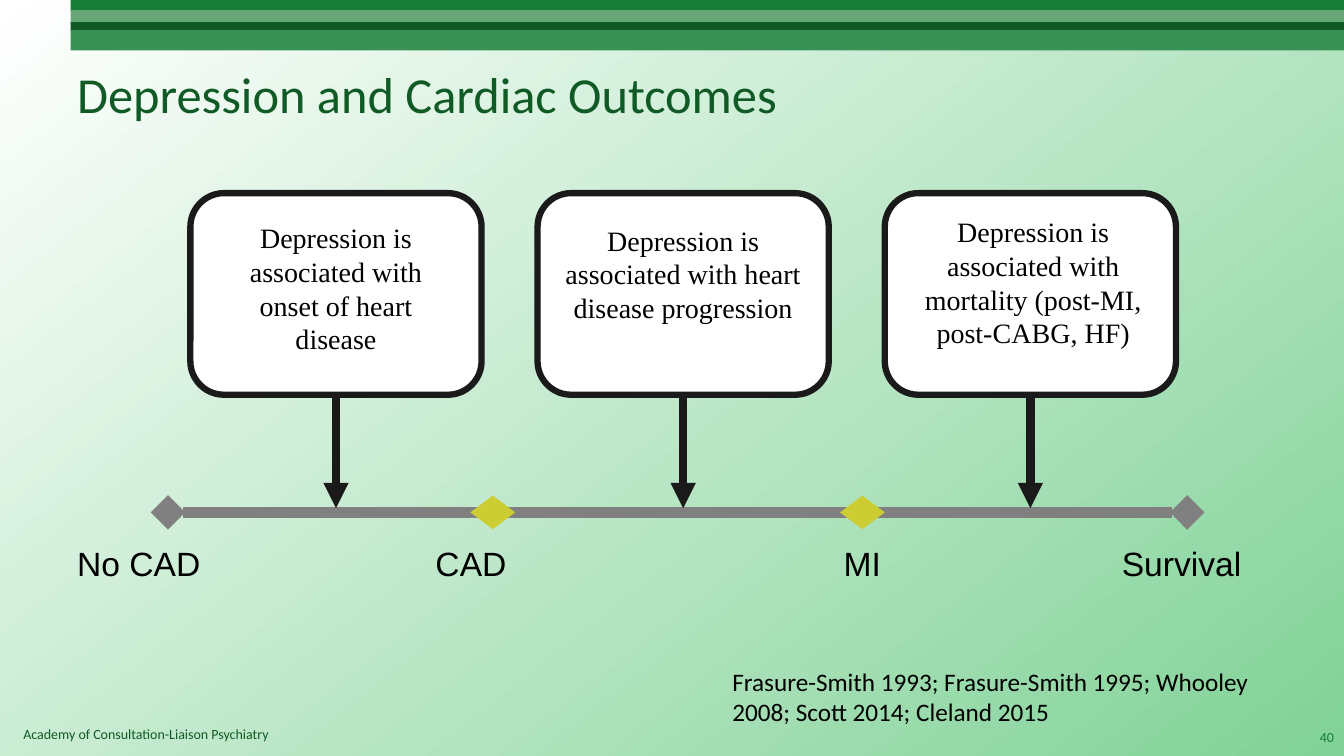
from lxml import etree
from pptx import Presentation
from pptx.dml.color import RGBColor
from pptx.enum.shapes import MSO_CONNECTOR, MSO_SHAPE
from pptx.enum.text import MSO_ANCHOR, MSO_AUTO_SIZE, PP_ALIGN
from pptx.oxml.ns import qn
from pptx.util import Inches, Pt

WIDTH, HEIGHT = Inches(13.33), Inches(7.5)
COLUMN, ROW = WIDTH / 120, HEIGHT / 90

WHITE = RGBColor(0xFF, 0xFF, 0xFF)
BLACK = RGBColor(0x00, 0x00, 0x00)
INK = RGBColor(0x1A, 0x1A, 0x1A)
GRAY = RGBColor(0x80, 0x80, 0x80)
YELLOW = RGBColor(0xCC, 0xCC, 0x33)
MINT = RGBColor(0x81, 0xD2, 0x97)
GREEN = RGBColor(0x17, 0x7D, 0x38)
SAGE = RGBColor(0x66, 0xA6, 0x77)
FOREST = RGBColor(0x10, 0x5A, 0x25)
LEAF = RGBColor(0x38, 0x91, 0x55)

# top row, bottom row, colour
BANDS = [(0, 1.3, GREEN), (1.2, 2.8, SAGE), (2.64, 3.7, FOREST), (3.6, 6, LEAF)]
CARD_LEFT, CARD_STEP, CARD_TOP, CARD_WIDTH, CARD_HEIGHT = 17, 31, 23, 26, 24
AXIS_ROW, ARROW_END = 61, 60.5
# wording and its left, top, width, height on the grid
FINDINGS = [
    ("Depression is associated with onset of heart disease", (19, 25.7, 22, 17.4)),
    ("Depression is associated with heart disease progression", (49, 26, 24, 13.3)),
    ("Depression is associated with mortality (post-MI, post-CABG, HF)",
     (79.5, 25, 25.5, 17.4)),
]
# stage, left column, width, alignment
STAGES = [
    ("No CAD", 6, 18, PP_ALIGN.LEFT),
    ("CAD", 38, 12, PP_ALIGN.LEFT),
    ("MI", 72, 10, PP_ALIGN.CENTER),
    ("Survival", 94, 23, PP_ALIGN.CENTER),
]
MILESTONES = [42, 75]


def on_grid(left, top, width, height):
    return (round(left * COLUMN), round(top * ROW),
            round(width * COLUMN), round(height * ROW))


def add_block(slide, preset, place, fill, outline=None, weight=0):
    block = slide.shapes.add_shape(preset, *on_grid(*place))
    block.shadow.inherit = False
    block.fill.solid()
    block.fill.fore_color.rgb = fill
    if outline is None:
        block.line.fill.background()
    else:
        block.line.color.rgb = outline
        block.line.width = Pt(weight)
    return block


def add_text(slide, wording, place, font, size, color, align=PP_ALIGN.LEFT,
             anchor=MSO_ANCHOR.TOP, fit=MSO_AUTO_SIZE.SHAPE_TO_FIT_TEXT):
    frame = slide.shapes.add_textbox(*on_grid(*place)).text_frame
    frame_format = {"word_wrap": True, "auto_size": fit, "vertical_anchor": anchor}
    for key, value in frame_format.items():
        setattr(frame, key, value)
    paragraph = frame.paragraphs[0]
    paragraph.alignment = align
    run = paragraph.add_run()
    run.text = wording
    for key, value in {"name": font, "size": Pt(size)}.items():
        setattr(run.font, key, value)
    run.font.color.rgb = color


def add_line(slide, start, end, color, weight, **ends):
    """Draw a line between two (column, row) points; ends maps headEnd/tailEnd to a type."""
    (x1, y1), (x2, y2) = start, end
    line = slide.shapes.add_connector(
        MSO_CONNECTOR.STRAIGHT, round(x1 * COLUMN), round(y1 * ROW),
        round(x2 * COLUMN), round(y2 * ROW))
    line.line.color.rgb = color
    line.line.width = Pt(weight)
    outline = line.line._get_or_add_ln()
    for tag, kind in ends.items():
        etree.SubElement(outline, qn(f"a:{tag}"), type=kind)
    etree.SubElement(line._element.spPr, qn("a:effectLst"))
    return line


def paint_background(slide):
    fill = slide.background.fill
    fill.gradient()
    fill.gradient_angle = 308
    for stop, position, color in zip(fill.gradient_stops, (0, 1), (WHITE, MINT)):
        stop.position = position
        stop.color.rgb = color


def add_finding(slide, index, wording, place):
    left = CARD_LEFT + index * CARD_STEP
    center = left + CARD_WIDTH / 2
    card = add_block(slide, MSO_SHAPE.ROUNDED_RECTANGLE,
                     (left, CARD_TOP, CARD_WIDTH, CARD_HEIGHT), WHITE, INK, 4.5)
    arrow = add_line(slide, (center, CARD_TOP + CARD_HEIGHT), (center, ARROW_END),
                     INK, 6, tailEnd="triangle")
    arrow.begin_connect(card, 2)
    add_text(slide, wording, place, "Times New Roman", 20, BLACK, PP_ALIGN.CENTER)


def add_timeline(slide):
    add_line(slide, (15, AXIS_ROW), (106, AXIS_ROW), GRAY, 8.25,
             headEnd="diamond", tailEnd="diamond")
    for left in MILESTONES:
        add_block(slide, MSO_SHAPE.DIAMOND, (left, AXIS_ROW - 2, 4, 4), YELLOW)
    for stage, left, width, align in STAGES:
        add_text(slide, stage, (left, 64, width, 6), "Arial", 24, BLACK, align)


def main():
    deck = Presentation()
    deck.slide_width, deck.slide_height = WIDTH, HEIGHT
    slide = deck.slides.add_slide(deck.slide_layouts[6])
    paint_background(slide)
    for top, bottom, color in BANDS:
        add_block(slide, MSO_SHAPE.RECTANGLE, (6.3, top, 113.7, bottom - top), color)
    add_text(slide, "Academy of Consultation-Liaison Psychiatry",
             (1.2, 85.8, 83.3, 3.2), "Calibri", 10, FOREST)

    add_timeline(slide)
    for index, (wording, place) in enumerate(FINDINGS):
        add_finding(slide, index, wording, place)

    add_text(slide, "Frasure-Smith 1993; Frasure-Smith 1995; Whooley 2008; "
             "Scott 2014; Cleland 2015", (64.5, 78.7, 52.3, 8.5), "Calibri", 18, BLACK)
    add_text(slide, "Depression and Cardiac Outcomes", (6, 3.6, 108, 15), "Calibri", 36,
             FOREST, anchor=MSO_ANCHOR.MIDDLE, fit=MSO_AUTO_SIZE.NONE)
    add_text(slide, "40", (116.4, 85.3, 3.6, 4.8), "Calibri", 10, GREEN,
             PP_ALIGN.RIGHT, MSO_ANCHOR.MIDDLE, MSO_AUTO_SIZE.NONE)
    deck.save("out.pptx")


if __name__ == "__main__":
    main()
